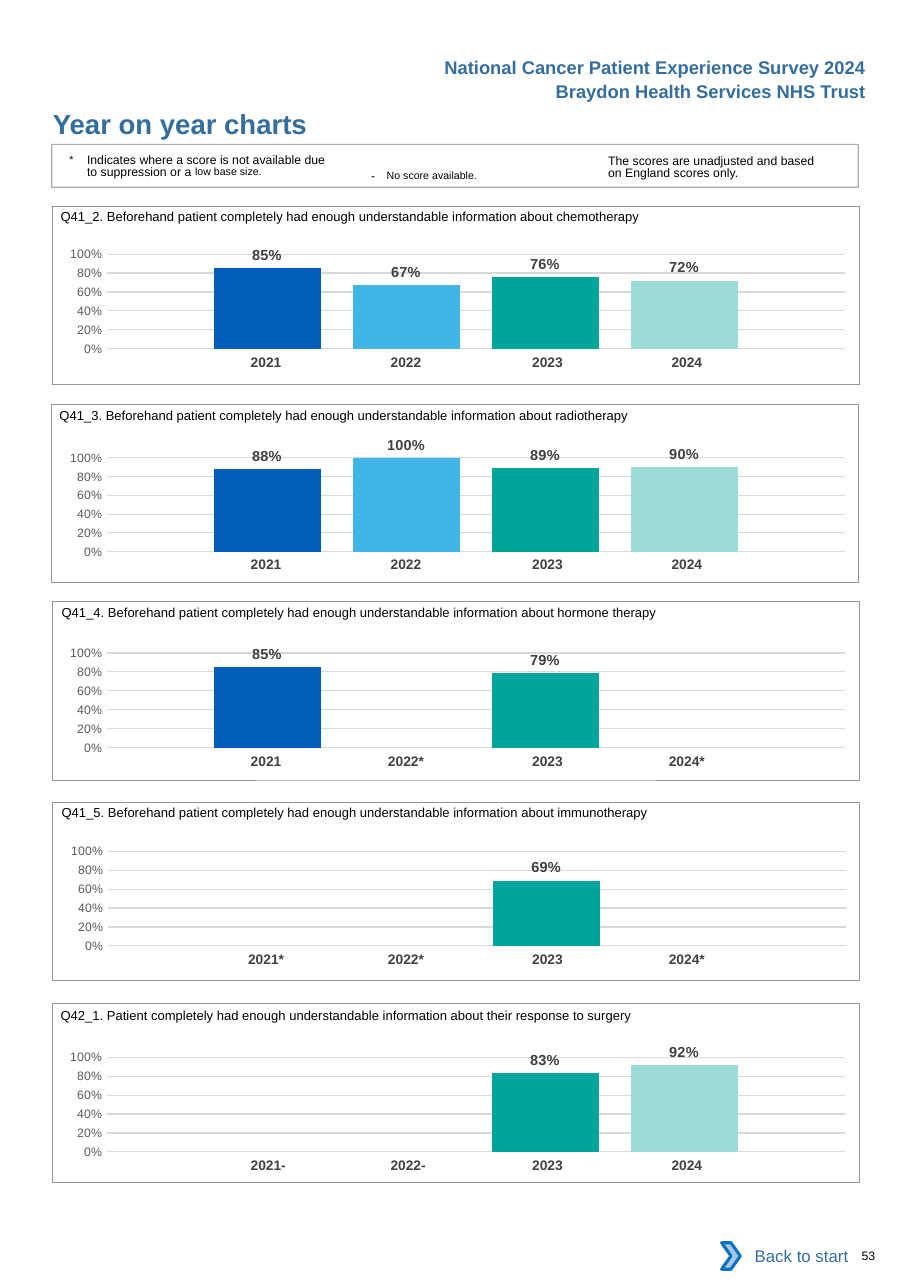
from dataclasses import dataclass
from typing import NamedTuple, Optional

from lxml import etree
from pptx import Presentation
from pptx import util as u
from pptx.chart.data import CategoryChartData
from pptx.dml.color import RGBColor
from pptx.enum import chart as ch
from pptx.enum import shapes, text
from pptx.oxml import parse_xml
from pptx.oxml.ns import nsdecls, qn

PX = 9144  # EMU per px, 100 px to the inch
BLUE, BLACK, GREY = "336E9F", "000000", "939598"
YEAR_COLOURS = ("005EB8", "41B6E6", "00A499", "9CDCD7")
YEAR_WIDTHS = (127, 127, 134, 127)
YEAR_RIGHT_MARGINS = (0, 0, 4, 12)
NO_TABLE_STYLE = "{2D5ABB26-0587-4C30-8999-92F81FD0307C}"
PLOT_LAYOUT = {"x": 0.079, "y": 0.145, "w": 0.915, "h": 0.666}


class Box(NamedTuple):
    left: int
    top: int
    width: int
    height: int

    def emu(self) -> list:
        return [u.Emu(side * PX) for side in self]


class Piece(NamedTuple):
    """A stretch of text; baseline is a percentage, spacing is in points."""
    words: str
    size: Optional[float] = None
    baseline: int = 0
    spacing: float = 0


@dataclass
class Question:
    title: str
    title_left: int
    title_top: int
    frame_left: int
    frame_top: int
    chart_left: int
    chart_top: int
    years: tuple
    scores: tuple


ENOUGH = "Beforehand patient completely had enough understandable information about "
QUESTIONS = (
    Question("Q41_2. " + ENOUGH + "chemotherapy", 55, 180, 48, 187, 39, 212,
             ("2021", "2022", "2023", "2024"), (0.85, 0.67, 0.76, 0.72)),
    Question("Q41_3. " + ENOUGH + "radiotherapy", 54, 361, 47, 367, 39, 396,
             ("2021", "2022", "2023", "2024"), (0.88, 1, 0.89, 0.9)),
    Question("Q41_4. " + ENOUGH + "hormone therapy", 56, 540, 48, 546, 39, 574,
             ("2021", "2022*", "2023", "2024*"), (0.85, None, 0.79, None)),
    Question("Q41_5. " + ENOUGH + "immunotherapy", 56, 721, 48, 728, 40, 754,
             ("2021*", "2022*", "2023", "2024*"), (None, None, 0.69, None)),
    Question("Q42_1. Patient completely had enough understandable information "
             "about their response to surgery", 55, 905, 48, 911, 39, 941,
             ("2021-", "2022-", "2023", "2024"), (None, None, 0.83, 0.92)),
)


def colour(code: str) -> RGBColor:
    return RGBColor.from_string(code)


def set_font(font, size: float, code: str, bold: bool = False) -> None:
    font.name, font.size, font.bold = "Arial", u.Pt(size), bold
    font.color.rgb = colour(code)


def set_margins(holder, left: int, top: int, right: int, bottom: int) -> None:
    holder.margin_left, holder.margin_top = u.Emu(left * PX), u.Emu(top * PX)
    holder.margin_right, holder.margin_bottom = u.Emu(right * PX), u.Emu(bottom * PX)


def add_text(slide, box: Box, pieces: list, size: float, code: str = BLACK,
             bold: bool = False, top_margin: int = 0):
    """Add a one-paragraph text box and return its paragraph."""
    frame = slide.shapes.add_textbox(*box.emu()).text_frame
    frame.word_wrap = True
    set_margins(frame, 0, top_margin, 0, 0)
    paragraph = frame.paragraphs[0]
    set_font(paragraph.font, size, code, bold)
    for piece in pieces:
        run = paragraph.add_run()
        run.text = piece.words
        if piece.size:
            run.font.size = u.Pt(piece.size)
        properties = run.font._element
        if piece.baseline:
            properties.set("baseline", str(piece.baseline * 1000))
        if piece.spacing:
            properties.set("spc", str(round(piece.spacing * 100)))
    return paragraph


def add_shape(slide, kind, box: Box, line: Optional[str] = None,
              weight: float = 0.5, fill: Optional[str] = None):
    shape = slide.shapes.add_shape(kind, *box.emu())
    shape.shadow.inherit = False
    if fill:
        shape.fill.solid()
        shape.fill.fore_color.rgb = colour(fill)
    else:
        shape.fill.background()
    if line:
        shape.line.color.rgb = colour(line)
        shape.line.width = u.Pt(weight)
    else:
        shape.line.fill.background()
    return shape


def add_years(slide, question: Question) -> None:
    box = Box(173, question.chart_top + 105, sum(YEAR_WIDTHS), 27)
    table = slide.shapes.add_table(1, len(YEAR_WIDTHS), *box.emu()).table
    table.first_row = table.horz_banding = False
    table._tbl.tblPr.find(qn("a:tableStyleId")).text = NO_TABLE_STYLE
    for index, year in enumerate(question.years):
        table.columns[index].width = u.Emu(YEAR_WIDTHS[index] * PX)
        cell = table.cell(0, index)
        cell.fill.background()
        set_margins(cell, 14 if year.endswith("-") else 10, 5, YEAR_RIGHT_MARGINS[index], 5)
        paragraph = cell.text_frame.paragraphs[0]
        paragraph.text = year
        paragraph.alignment = text.PP_ALIGN.CENTER
        set_font(paragraph.font, 9, "414042", True)


def fix_plot_area(chart) -> None:
    """Pin the inner plot area to fixed fractions of the chart."""
    plot_area = chart._chartSpace.chart.plotArea
    for old in plot_area.findall(qn("c:layout")):
        plot_area.remove(old)
    layout = parse_xml(f"<c:layout {nsdecls('c')}/>")
    manual = etree.SubElement(layout, qn("c:manualLayout"))
    settings = {"layoutTarget": "inner", "xMode": "edge", "yMode": "edge", **PLOT_LAYOUT}
    for tag, value in settings.items():
        etree.SubElement(manual, qn("c:" + tag)).set("val", str(value))
    plot_area.insert(0, layout)


def add_scores(slide, question: Question) -> None:
    data = CategoryChartData(number_format="0%")
    data.categories = ["1"]
    for number, score in enumerate(question.scores, 1):
        data.add_series(f"Series {number}", [score])
    box = Box(question.chart_left, question.chart_top, 732, 129)
    chart = slide.shapes.add_chart(ch.XL_CHART_TYPE.COLUMN_CLUSTERED, *box.emu(), data).chart
    chart.has_legend = chart.has_title = False
    chart.font.name, chart.font.size = "Calibri", u.Pt(10)
    chart.font.color.rgb = colour(BLACK)
    chart.category_axis.visible = False
    axis = chart.value_axis
    axis.minimum_scale, axis.maximum_scale, axis.major_unit = 0, 1, 0.2
    axis.major_tick_mark = axis.minor_tick_mark = ch.XL_TICK_MARK.NONE
    axis.format.line.fill.background()
    axis.major_gridlines.format.line.color.rgb = colour("D9D9D9")
    axis.major_gridlines.format.line.width = u.Pt(0.75)
    axis.tick_labels.number_format = "0%"
    axis.tick_labels.number_format_is_linked = False
    set_font(axis.tick_labels.font, 8, "595959")
    plot = chart.plots[0]
    plot.gap_width, plot.overlap, plot.vary_by_categories = 200, -30, False
    for series, code in zip(plot.series, YEAR_COLOURS):
        series.format.fill.solid()
        series.format.fill.fore_color.rgb = colour(code)
        labels = series.data_labels
        labels.show_value = True
        labels.position = ch.XL_LABEL_POSITION.OUTSIDE_END
        labels.number_format, labels.number_format_is_linked = "0%", False
        set_font(labels.font, 9.5, "404040", True)
    fix_plot_area(chart)


def add_notes(slide) -> None:
    frame = add_shape(slide, shapes.MSO_SHAPE.RECTANGLE, Box(47, 131, 732, 39), GREY, 0.75)
    rgb = frame.line._ln.find(".//" + qn("a:srgbClr"))
    etree.SubElement(rgb, qn("a:alpha")).set("val", "80000")
    suppressed = add_text(slide, Box(63, 138, 238, 27), [
        Piece("*\t", 12, 3),
        Piece("Indicates where a score is not available due to suppression or a "),
        Piece("low base size.", 12, 7)], 8, top_margin=3)
    indent = 16 * PX
    suppressed._p.get_or_add_pPr().set("marL", str(indent))
    suppressed._p.get_or_add_pPr().set("indent", str(-indent))
    add_text(slide, Box(337, 147, 163, 20),
             [Piece("- ", spacing=2.6), Piece("No score available.", 12, 3)], 8)
    unadjusted = add_text(slide, Box(552, 138, 195, 27), [
        Piece("The scores are unadjusted and based on England scores only.")], 8, top_margin=3)
    for note in (suppressed, unadjusted):
        note.line_spacing = u.Pt(8.1)


def add_back_button(slide) -> None:
    button = add_shape(slide, shapes.MSO_SHAPE.RECTANGLE, Box(662, 1119, 118, 42), fill="FFFFFF")
    paragraph = button.text_frame.paragraphs[0]
    paragraph.text = "Back to start"
    paragraph.alignment = text.PP_ALIGN.RIGHT
    set_font(paragraph.font, 11, BLUE)
    add_shape(slide, shapes.MSO_SHAPE.CHEVRON, Box(655, 1128, 17, 24), "0A74BB", 2, "A8C7E9")


def main() -> None:
    deck = Presentation()
    deck.slide_width, deck.slide_height = u.Emu(826 * PX), u.Emu(1169 * PX)
    slide = deck.slides.add_slide(deck.slide_layouts[6])
    headings = ("National Cancer Patient Experience Survey 2024",
                "Braydon Health Services NHS Trust")
    for row, heading in enumerate(headings):
        paragraph = add_text(slide, Box(380, 51 + 22 * row, 406, 20), [Piece(heading)],
                             12, BLUE, True)
        paragraph.alignment = text.PP_ALIGN.RIGHT
    add_text(slide, Box(48, 97, 450, 30), [Piece("Year on year charts")], 18, BLUE, True)
    add_notes(slide)
    for question in QUESTIONS:
        add_years(slide, question)
        add_scores(slide, question)
        add_text(slide, Box(question.title_left, question.title_top, 720, 24),
                 [Piece(question.title)], 8.5, top_margin=9)
        add_shape(slide, shapes.MSO_SHAPE.RECTANGLE,
                  Box(question.frame_left, question.frame_top, 732, 162), GREY)
    add_back_button(slide)
    add_text(slide, Box(782, 1133, 41, 13), [Piece("53")], 8)
    deck.save("out.pptx")


if __name__ == "__main__":
    main()
